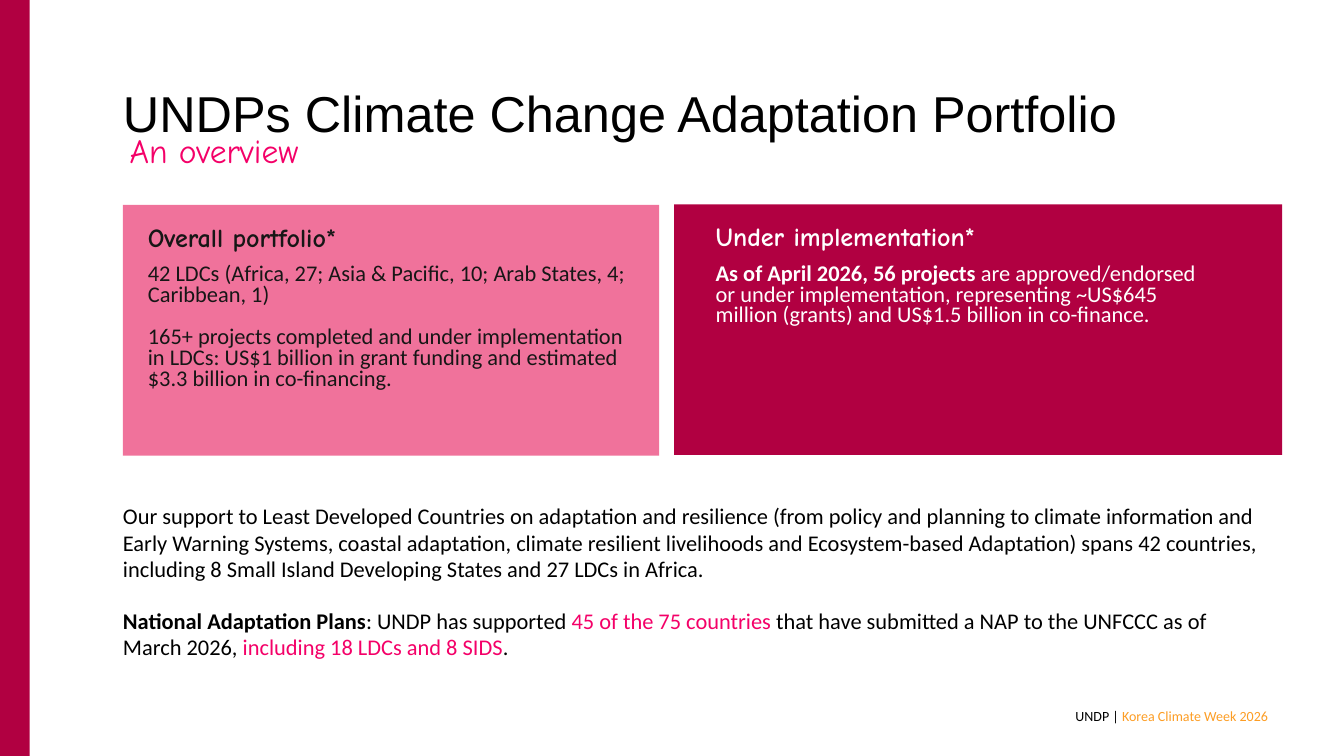
"""Builds a one-slide overview of a climate adaptation portfolio."""
from dataclasses import dataclass

from pptx import Presentation
from pptx import util as u
from pptx.dml import color
from pptx.enum import shapes, text


@dataclass(frozen=True)
class Theme:
    """Holds the colours, fonts and type sizes."""
    black: str = "000000"
    white: str = "FFFFFF"
    ink: str = "171616"
    crimson: str = "B10041"
    rose: str = "F0729B"
    pink: str = "F40068"
    orange: str = "FD9D24"
    sans: str = "Arial"
    body: str = "Calibri"
    hand: str = "Comic Neue"
    title: int = 54
    sub: int = 36
    head: int = 28
    copy: int = 24
    small: int = 15


T = Theme()


def add_block(slide, box, fill):
    """Draws a plain filled rectangle."""
    block = slide.shapes.add_shape(
        shapes.MSO_SHAPE.RECTANGLE, *map(u.Inches, box))
    block.shadow.inherit = False
    block.fill.solid()
    block.fill.fore_color.rgb = color.RGBColor.from_string(fill)
    block.line.fill.background()


def add_text(slide, box, paras, font, size, lead=None, gap=0,
             align=text.PP_ALIGN.LEFT):
    """Sets paragraphs of (words, colour, bold) runs in a box without insets."""
    frame = slide.shapes.add_textbox(*map(u.Inches, box)).text_frame
    frame.word_wrap = True
    frame.margin_left = frame.margin_right = 0
    frame.margin_top = frame.margin_bottom = 0
    for num, runs in enumerate(paras):
        para = frame.add_paragraph() if num else frame.paragraphs[0]
        para.alignment = align
        if lead:
            para.line_spacing = u.Pt(lead)
        if num and gap:
            para.space_before = u.Pt(gap)
        for words, tint, bold in runs:
            run = para.add_run()
            run.text = words
            run.font.name = font
            run.font.size = u.Pt(size)
            run.font.bold = bold
            run.font.color.rgb = color.RGBColor.from_string(tint)


def add_header(slide, box, title, sub):
    """Places the title and the handwritten line below it."""
    left, top, width, height = box
    add_text(slide, (left, top, width, 1.36), [[(title, T.black, False)]],
             T.sans, T.title, lead=108)
    add_text(slide, (left + 0.1, top + 1.32, 6.55, height - 1.32),
             [[(sub, T.pink, False)]], T.hand, T.sub)


def add_card(slide, box, fill, ink, inset, wide, head, paras):
    """Places a filled card with its heading and copy."""
    left, top, width, height = box
    add_block(slide, box, fill)
    add_text(slide, (left + inset, top + 0.32, wide, 0.4),
             [[(head, ink, True)]], T.hand, T.head, lead=28)
    runs = [[(words, ink, bold) for words, bold in para] for para in paras]
    add_text(slide, (left + inset, top + 0.9, wide, height - 1.2), runs,
             T.body, T.copy, lead=22.4, gap=22.4)


def add_story(slide, box):
    """Places the two paragraphs on support and national plans."""
    add_text(slide, box, [
        [("Our support to Least Developed Countries on adaptation and "
          "resilience (from policy and planning to climate information and "
          "Early Warning Systems, coastal adaptation, climate resilient "
          "livelihoods and Ecosystem-based Adaptation) spans 42 countries, "
          "including 8 Small Island Developing States and 27 LDCs in Africa.",
          T.black, False)],
        [("National Adaptation Plans", T.black, True),
         (": UNDP has supported ", T.black, False),
         ("45 of the 75 countries ", T.pink, False),
         ("that have submitted a NAP to the UNFCCC as of March 2026, ",
          T.black, False),
         ("including 18 LDCs and 8 SIDS", T.pink, False),
         (".", T.black, False)],
    ], T.body, T.copy, lead=28, gap=28)


def add_footer(slide, box):
    """Places the right-aligned source line."""
    add_text(slide, box, [[("UNDP | ", T.black, False),
                           ("Korea Climate Week 2026", T.orange, False)]],
             T.body, T.small, lead=19.5, align=text.PP_ALIGN.RIGHT)


def main():
    """Builds and saves the slide."""
    deck = Presentation()
    deck.slide_width, deck.slide_height = u.Inches(20), u.Inches(11.25)
    slide = deck.slides.add_slide(deck.slide_layouts[6])
    left = 1.83
    add_block(slide, (0, 0, 0.44, 11.25), T.crimson)
    add_header(slide, (left, 0.62, 15.84, 1.93),
               "UNDPs Climate Change Adaptation Portfolio", "An overview")
    add_card(slide, (left, 3.05, 7.98, 3.73), T.rose, T.ink, 0.37, 7.12,
             "Overall portfolio*", [
                 [("42 LDCs (Africa, 27; Asia & Pacific, 10; "
                   "Arab States, 4; Caribbean, 1)", False)],
                 [("165+ projects completed and under implementation in "
                   "LDCs: US$1 billion in grant funding and estimated "
                   "$3.3 billion in co-financing.", False)]])
    add_card(slide, (10.03, 3.04, 9.05, 3.73), T.crimson, T.white, 0.62, 7.31,
             "Under implementation*", [
                 [("As of April 2026, 56 projects", True),
                  (" are approved/endorsed or under implementation, "
                   "representing ~US$645 million (grants) and "
                   "US$1.5 billion in co-finance.", False)]])
    add_story(slide, (left, 7.49, 17.04, 2.4))
    add_footer(slide, (11.25, 10.51, 7.62, 0.27))
    deck.save("out.pptx")


if __name__ == "__main__":
    main()
